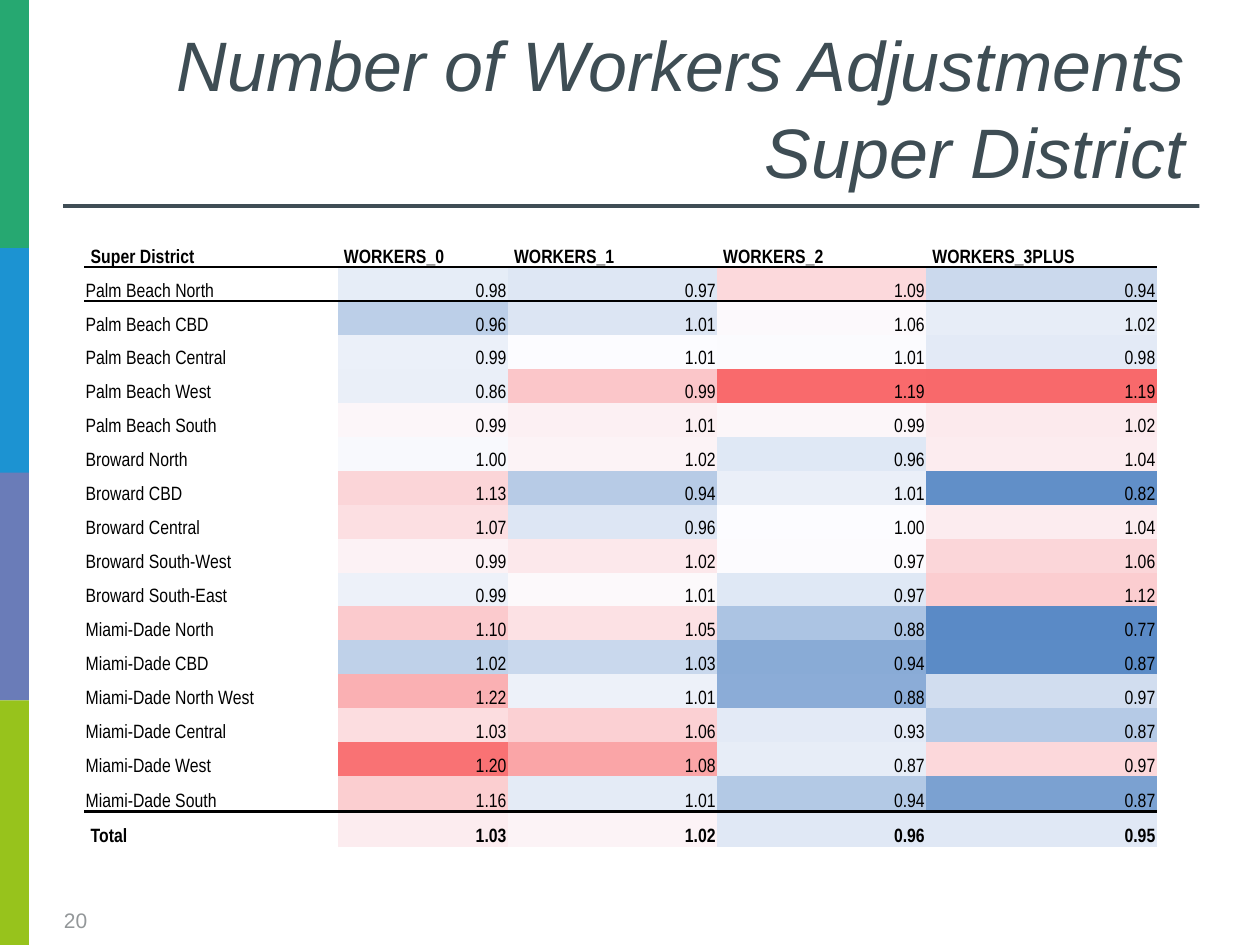
from lxml import etree
from pptx import Presentation
from pptx.dml.color import RGBColor
from pptx.enum.shapes import MSO_SHAPE
from pptx.enum.text import MSO_ANCHOR, PP_ALIGN
from pptx.oxml.ns import qn
from pptx.util import Inches, Pt

RECT = MSO_SHAPE.RECTANGLE
LEFT, RIGHT = PP_ALIGN.LEFT, PP_ALIGN.RIGHT
MIDDLE, BOTTOM = MSO_ANCHOR.MIDDLE, MSO_ANCHOR.BOTTOM
PLAIN = "{2D5ABB26-0587-4C30-8999-92F81FD0307C}"

BANDS = [("26A871", 0, 1.97), ("1C93D2", 1.97, 1.79),
         ("6A7CB8", 3.75, 1.81), ("97C31C", 5.56, 1.94)]
HEADS = ["Super District", "WORKERS_0", "WORKERS_1", "WORKERS_2", "WORKERS_3PLUS"]
WIDTHS = [2.01, 1.35, 1.66, 1.66, 1.83]
ROWS = [
    ("Palm Beach North", "0.98 0.97 1.09 0.94", "E6EDF7 DEE7F4 FCD9DC CBD9ED"),
    ("Palm Beach CBD", "0.96 1.01 1.06 1.02", "BCCFE8 DCE5F3 FCF9FC E7EDF7"),
    ("Palm Beach Central", "0.99 1.01 1.01 0.98", "EBF0F9 FCFCFF FBFBFE E3EAF6"),
    ("Palm Beach West", "0.86 0.99 1.19 1.19", "EAEFF8 FBC6C9 F96A6C F8696B"),
    ("Palm Beach South", "0.99 1.01 0.99 1.02", "FCF6F9 FCF0F3 FCF6F9 FCEAED"),
    ("Broward North", "1.00 1.02 0.96 1.04", "F8F9FD FCF3F6 DFE8F5 FCECEF"),
    ("Broward CBD", "1.13 0.94 1.01 0.82", "FBD5D8 B7CBE6 EAEFF8 618FC8"),
    ("Broward Central", "1.07 0.96 1.00 1.04", "FCDFE2 DDE6F4 FCFCFF FCECEF"),
    ("Broward South-West", "0.99 1.02 0.97 1.06", "FCF2F5 FCE8EB FCFBFE FBD6D9"),
    ("Broward South-East", "0.99 1.01 0.97 1.12", "EDF1F9 FCF9FB DFE8F5 FBCDD0"),
    ("Miami-Dade North", "1.10 1.05 0.88 0.77", "FBCACD FCE1E4 ACC4E3 5A8AC6"),
    ("Miami-Dade CBD", "1.02 1.03 0.94 0.87", "BFD1E9 C9D8ED 89ABD6 5B8BC6"),
    ("Miami-Dade North West", "1.22 1.01 0.88 0.97", "FAB0B3 EDF1F9 8BACD7 D1DDEF"),
    ("Miami-Dade Central", "1.03 1.06 0.93 0.87", "FCDDE0 FBD0D3 E3EAF6 B5CAE6"),
    ("Miami-Dade West", "1.20 1.08 0.87 0.97", "F97274 FAA5A7 E7EDF7 FCD8DB"),
    ("Miami-Dade South", "1.16 1.01 0.94 0.87", "FBCED0 E4EBF6 B3C9E5 7BA1D1"),
    ("Total", "1.03 1.02 0.96 0.95", "FCECEF FCF3F6 E0E8F5 E0E8F5"),
]


def paint(fill, color):
    fill.solid()
    fill.fore_color.rgb = RGBColor.from_string(color)


def write(frame, text, size=11, font="Arial Narrow", color="000000",
          bold=False, italic=False, align=LEFT, space=None):
    para = frame.paragraphs[0]
    para.text = text
    para.alignment = align
    para.line_spacing = space
    for run in para.runs:
        run.font.size = Pt(size)
        run.font.name = font
        run.font.bold = bold
        run.font.italic = italic
        paint(run.font.fill, color)


def rule(cell, side, width):
    line = etree.Element(qn("a:" + side), w=str(Pt(width)))
    fill = etree.SubElement(line, qn("a:solidFill"))
    etree.SubElement(fill, qn("a:srgbClr"), val="000000")
    cell._tc.get_or_add_tcPr().insert(0, line)


class Deck:
    """Holds the title and table style and draws on the current slide."""

    def __init__(self):
        self.deck = Presentation()
        self.deck.slide_width, self.deck.slide_height = Inches(10), Inches(7.5)
        self.slide = self.deck.slides.add_slide(self.deck.slide_layouts[6])
        self.font, self.ink, self.gray = "Arial", "3E4D54", "939799"

    def bar(self, color, *box):
        shape = self.slide.shapes.add_shape(RECT, *map(Inches, box))
        shape.shadow.inherit = False
        paint(shape.fill, color)
        shape.line.fill.background()

    def text(self, text, *box, anchor=MIDDLE, **style):
        frame = self.slide.shapes.add_textbox(*map(Inches, box)).text_frame
        frame.word_wrap = True
        frame.vertical_anchor = anchor
        write(frame, text, font=self.font, **style)

    def cell(self, cell, text, fill=None, pad=0.01, **style):
        cell.margin_left = Inches(pad)
        cell.margin_right = cell.margin_top = Inches(0.01)
        cell.margin_bottom = 0
        cell.vertical_anchor = BOTTOM
        if fill:
            paint(cell.fill, fill)
        else:
            cell.fill.background()
        write(cell.text_frame, text, **style)

    def table(self, heads, rows, widths, left, top, height, edge):
        last = len(rows)
        table = self.slide.shapes.add_table(
            last + 1, len(heads), Inches(left), Inches(top),
            Inches(sum(widths)), Inches(height)).table
        table._tbl.tblPr.find(qn("a:tableStyleId")).text = PLAIN
        table.first_row = table.horz_banding = False
        for col, width in zip(table.columns, widths):
            col.width = Inches(width)
        tall = {0, last - 1, last}
        inner = (height - len(tall) * edge) / (last + 1 - len(tall))
        for num, row in enumerate(table.rows):
            row.height = Inches(edge if num in tall else inner)
        for col, head in enumerate(heads):
            self.cell(table.cell(0, col), head, pad=0.05, bold=True)
        for num, (name, values, fills) in enumerate(rows, 1):
            bold = num == last
            self.cell(table.cell(num, 0), name, pad=0.05 if bold else 0.01, bold=bold)
            for col, (value, fill) in enumerate(zip(values.split(), fills.split()), 1):
                self.cell(table.cell(num, col), value, fill, bold=bold, align=RIGHT)
        for num, width in ((0, 1), (last - 1, 2)):
            for col in range(len(heads)):
                rule(table.cell(num, col), "lnB", width)
                rule(table.cell(num + 1, col), "lnT", width)

    def save(self):
        self.deck.save("out.pptx")


def main():
    deck = Deck()
    for color, top, height in BANDS:
        deck.bar(color, 0, top, 0.23, height)
    deck.bar("3F4D55", 0.5, 1.62, 9.02, 0.03)
    deck.text("Number of Workers Adjustments\nSuper District", 0.5, -0.01, 9, 1.59,
              anchor=BOTTOM, size=40, color=deck.ink, italic=True,
              align=RIGHT, space=1.04)
    deck.text("20", 0.41, 7.1, 0.73, 0.4, size=12, color=deck.gray)
    deck.table(HEADS, ROWS, WIDTHS, left=0.67, top=1.84, height=4.88, edge=0.28)
    deck.save()


if __name__ == "__main__":
    main()
